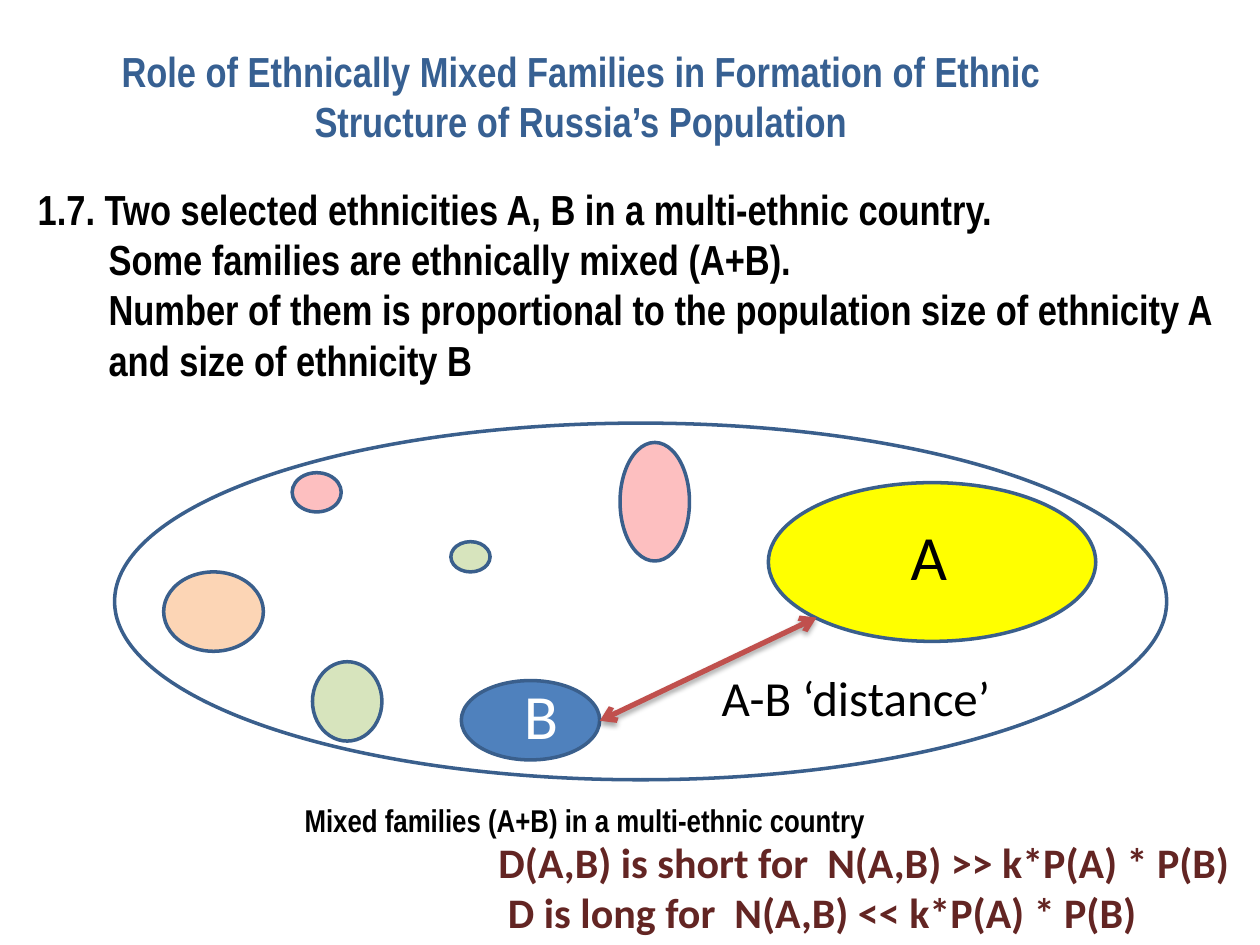
from dataclasses import dataclass
from typing import Optional

from lxml import etree
from pptx import Presentation
from pptx import util as u
from pptx.dml.color import RGBColor
from pptx.enum import shapes, text
from pptx.oxml import parse_xml
from pptx.oxml.ns import nsdecls, qn

OUTLINE = "3A5F8C"
NARROW = "Arial Narrow"


@dataclass
class Ellipse:
    left: float
    top: float
    width: float
    height: float
    fill: Optional[str] = None


@dataclass
class Label:
    left: float
    top: float
    width: float
    height: float
    wording: str
    size: int
    color: str = "000000"
    font: str = "Calibri"
    bold: bool = False
    middle: bool = False
    centered: bool = False
    hanging: float = 0
    wrap: bool = True


ELLIPSES = [
    Ellipse(2.31, 8.53, 21.21, 7.19),
    Ellipse(9.3, 13.72, 2.79, 1.6, "4F81BD"),
    Ellipse(15.49, 9.73, 6.6, 3.2, "FFFF00"),
    Ellipse(3.3, 11.53, 2.01, 1.6, "FCD5B5"),
    Ellipse(9.09, 10.92, 0.79, 0.61, "D7E4BD"),
    Ellipse(12.5, 8.92, 1.4, 2.39, "FDBFC0"),
    Ellipse(6.3, 13.34, 1.4, 1.6, "D7E4BD"),
    Ellipse(5.89, 9.53, 0.99, 0.79, "FDBFC0"),
]

LABELS = [
    Label(0.71, 0.53, 22, 2.79,
          "Role of Ethnically Mixed Families in Formation of Ethnic Structure of Russia’s Population",
          24, "376092", NARROW, bold=True, middle=True, centered=True),
    Label(0.51, 3.53, 24.89, 4.39,
          "1.7. Two selected ethnicities A, B in a multi-ethnic country.\v"
          "Some families are ethnically mixed (A+B). \v"
          "Number of them is proportional to the population size of ethnicity A and size of ethnicity B",
          24, font=NARROW, bold=True, middle=True, hanging=1.43),
    Label(5.89, 15.72, 14, 1.6, "Mixed families (A+B) in a multi-ethnic country",
          18, font=NARROW, bold=True, middle=True, hanging=1.43),
    Label(18.11, 10.31, 1.24, 1.8, "A", 36, wrap=False),
    Label(10.31, 13.51, 0.79, 1.8, "B", 36, "FFFFFF"),
    Label(14.3, 13.34, 5.97, 1.45, "A-B ‘distance’", 28, wrap=False),
    Label(9.8, 16.74, 15.6, 2.31,
          "D(A,B) is short for  N(A,B) >> k*P(A) * P(B)\v D is long for  N(A,B) << k*P(A) * P(B)",
          24, "632523", bold=True),
]


def paint(color_format, color: str) -> None:
    color_format.rgb = RGBColor.from_string(color)


def draw_ellipse(slide, item: Ellipse) -> None:
    box = [u.Cm(value) for value in (item.left, item.top, item.width, item.height)]
    shape = slide.shapes.add_shape(shapes.MSO_SHAPE.OVAL, *box)
    shape.shadow.inherit = False
    if item.fill:
        shape.fill.solid()
        paint(shape.fill.fore_color, item.fill)
    else:
        shape.fill.background()
    paint(shape.line.color, OUTLINE)
    shape.line.width = u.Pt(2)


def draw_label(slide, item: Label) -> None:
    box = [u.Cm(value) for value in (item.left, item.top, item.width, item.height)]
    frame = slide.shapes.add_textbox(*box).text_frame
    frame.word_wrap = item.wrap
    frame.vertical_anchor = text.MSO_ANCHOR.MIDDLE if item.middle else text.MSO_ANCHOR.TOP
    if not item.middle:
        frame.auto_size = text.MSO_AUTO_SIZE.SHAPE_TO_FIT_TEXT
    paragraph = frame.paragraphs[0]
    paragraph.text = item.wording
    paragraph.alignment = text.PP_ALIGN.CENTER if item.centered else text.PP_ALIGN.LEFT
    if item.hanging:
        properties = paragraph._p.get_or_add_pPr()
        properties.set("marL", str(u.Cm(item.hanging)))
        properties.set("indent", str(-u.Cm(item.hanging)))
    for run in paragraph.runs:
        run.font.name = item.font
        run.font.size = u.Pt(item.size)
        run.font.bold = item.bold
        paint(run.font.color, item.color)


def draw_distance(slide) -> None:
    ends = [u.Cm(value) for value in (12.09, 14.53, 16.46, 12.45)]
    connector = slide.shapes.add_connector(shapes.MSO_CONNECTOR.STRAIGHT, *ends)
    paint(connector.line.color, "C0504D")
    connector.line.width = u.Pt(3)
    for tag in ("a:headEnd", "a:tailEnd"):
        etree.SubElement(connector.line._get_or_add_ln(), qn(tag)).set("type", "arrow")
    connector._element.spPr.append(parse_xml(
        f'<a:effectLst {nsdecls("a")}>'
        f'<a:outerShdw blurRad="{u.Pt(3.1)}" dist="{u.Pt(1.8)}" dir="5400000" rotWithShape="0">'
        '<a:srgbClr val="000000"><a:alpha val="35000"/></a:srgbClr>'
        '</a:outerShdw></a:effectLst>'))


def main() -> None:
    """Build the slide on mixed families and the distance between ethnicities."""
    presentation = Presentation()
    presentation.slide_width, presentation.slide_height = u.Cm(25.4), u.Cm(19.05)
    slide = presentation.slides.add_slide(presentation.slide_layouts[6])
    for ellipse in ELLIPSES:
        draw_ellipse(slide, ellipse)
    draw_distance(slide)
    for label in LABELS:
        draw_label(slide, label)
    presentation.save("out.pptx")


if __name__ == "__main__":
    main()
